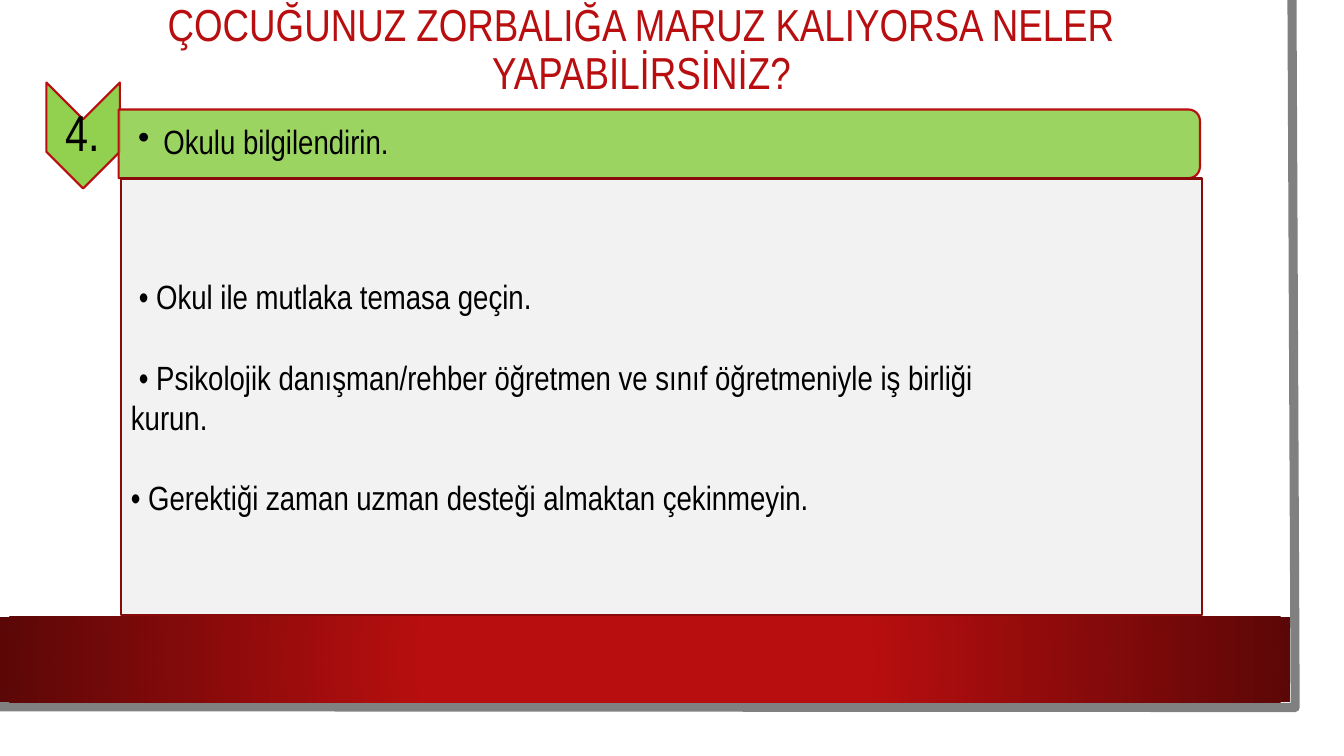
"""Builds the slide on informing the school when a child is bullied."""
from dataclasses import dataclass

from lxml import etree
from pptx import Presentation
from pptx import util as u
from pptx.dml.color import RGBColor
from pptx.enum import shapes, text
from pptx.oxml import ns

HEADING = "ÇOCUĞUNUZ ZORBALIĞA MARUZ KALIYORSA NELER YAPABİLİRSİNİZ?"
STEP = "4."
ADVICE = "Okulu bilgilendirin."
# (text, first-line indent in cm, gap before in points)
DETAILS = [
    ("• Okul ile mutlaka temasa geçin.", 0.2, 0),
    ("• Psikolojik danışman/rehber öğretmen ve sınıf öğretmeniyle iş birliği", 0.2, 28.7),
    ("kurun.", 0, 0),
    ("• Gerektiği zaman uzman desteği almaktan çekinmeyin.", 0, 28.7),
]
BOXES = {
    "paper": (0, 0, 33.27, 18.47),
    "band": (0, 15.54, 32.51, 2.16),
    "heading": (1.73, 0.53, 28.88, 1.52),
    "chevron": (1.17, 2.08, 1.85, 2.67),
    "step": (1.17, 3.02, 1.85, 0.79),
    "bar": (2.99, 2.76, 27.25, 1.73),
    "advice": (3, 2.84, 27.18, 1.55),
    "details": (3.05, 4.5, 27.25, 11),
}
PAPER_EDGE = [(32.56, 0), (32.64, 17.83), (0, 17.81)]


@dataclass(frozen=True)
class Theme:
    """Colours, font and type sizes."""
    font: str = "Arial Narrow"
    white: str = "FFFFFF"
    black: str = "000000"
    grey: str = "808080"
    pale: str = "F2F2F2"
    red: str = "B80E0F"
    deep_red: str = "880A0B"
    dark_red: str = "5C0707"
    green: str = "92D050"
    heading: int = 32
    step: int = 36
    body: int = 24
    outline: float = 1.5
    edge: float = 6.5


THEME = Theme()


def frame(name, turned=False):
    """Return a box in Cm, with its sides swapped for a quarter turn."""
    left, top, width, height = BOXES[name]
    if turned:
        shift = (width - height) / 2
        left, top, width, height = left + shift, top - shift, height, width
    return [u.Cm(length) for length in (left, top, width, height)]


def add_box(slide, name, kind, fill, line=None, turned=False):
    """Add a preset shape with flat fill and optional outline."""
    box = slide.shapes.add_shape(kind, *frame(name, turned))
    box.shadow.inherit = False
    box.rotation = 90 if turned else 0
    box.fill.solid()
    box.fill.fore_color.rgb = RGBColor.from_string(fill)
    if line:
        box.line.color.rgb = RGBColor.from_string(line)
        box.line.width = u.Pt(THEME.outline)
    else:
        box.line.fill.background()
    return box


def add_label(slide, name):
    """Add an empty text box and return its frame."""
    return slide.shapes.add_textbox(*frame(name)).text_frame


def style(holder, size, color=THEME.black, align=text.PP_ALIGN.LEFT, spacing=0.9):
    """Format every paragraph of a text frame."""
    holder.word_wrap = True
    holder.auto_size = text.MSO_AUTO_SIZE.NONE
    holder.vertical_anchor = text.MSO_ANCHOR.MIDDLE
    for paragraph in holder.paragraphs:
        paragraph.alignment = align
        paragraph.line_spacing = spacing
        for run in paragraph.runs:
            run.font.name = THEME.font
            run.font.size = u.Pt(size)
            run.font.color.rgb = RGBColor.from_string(color)


def set_insets(holder, left, other):
    """Set the left inset and the three others, in cm."""
    holder.margin_left = u.Cm(left)
    holder.margin_top = holder.margin_right = holder.margin_bottom = u.Cm(other)


def glow(box):
    """Give a shape the red gradient that darkens from its centre."""
    solid = box.fill._xPr.find(ns.qn("a:solidFill"))
    gradient = etree.fromstring(
        f'<a:gradFill {ns.nsdecls("a")} rotWithShape="1"><a:gsLst>'
        f'<a:gs pos="34000"><a:srgbClr val="{THEME.red}"/></a:gs>'
        f'<a:gs pos="100000"><a:srgbClr val="{THEME.dark_red}"/></a:gs></a:gsLst>'
        '<a:path path="circle"><a:fillToRect l="50000" t="50000" r="50000" b="50000"/>'
        '</a:path></a:gradFill>')
    solid.getparent().replace(solid, gradient)


def draw_backdrop(slide):
    """Draw the paper, its grey edge and the red band."""
    preset = shapes.MSO_SHAPE.RECTANGLE
    add_box(slide, "paper", preset, THEME.white)
    start, *rest = [(u.Cm(x), u.Cm(y)) for x, y in PAPER_EDGE]
    outline = slide.shapes.build_freeform(*start)
    outline.add_line_segments(rest, close=False)
    edge = outline.convert_to_shape()
    edge.shadow.inherit = False
    edge.fill.background()
    edge.line.color.rgb = RGBColor.from_string(THEME.grey)
    edge.line.width = u.Pt(THEME.edge)
    glow(add_box(slide, "band", preset, THEME.red))


def write_heading(slide):
    """Place the title in front of the backdrop."""
    heading = slide.shapes.title
    slide.shapes._spTree.append(heading._element)
    heading.left, heading.top, heading.width, heading.height = frame("heading")
    heading.text_frame.text = HEADING
    style(heading.text_frame, THEME.heading, THEME.red, text.PP_ALIGN.CENTER)


def draw_step(slide):
    """Draw the numbered chevron and the green bar with its advice."""
    preset = shapes.MSO_SHAPE
    add_box(slide, "chevron", preset.CHEVRON, THEME.green, THEME.red, turned=True)
    step = add_label(slide, "step")
    step.text = STEP
    set_insets(step, 0.08, 0.08)
    style(step, THEME.step, align=text.PP_ALIGN.CENTER)

    bar = add_box(slide, "bar", preset.ROUND_2_SAME_RECTANGLE, THEME.green,
                  THEME.red, turned=True)
    tint = bar.fill._xPr.find(ns.qn("a:solidFill"))[0]
    etree.SubElement(tint, ns.qn("a:alpha"), val="90000")

    advice = add_label(slide, "advice")
    advice.text = ADVICE
    set_insets(advice, 0.48, 0.05)
    layout = advice.paragraphs[0]._p.get_or_add_pPr()
    layout.set("marL", str(u.Cm(0.64)))
    layout.set("indent", str(u.Cm(-0.64)))
    etree.SubElement(layout, ns.qn("a:buChar"), char="•")
    style(advice, THEME.body)


def draw_details(slide):
    """Draw the grey panel with its lines of advice."""
    panel = add_box(slide, "details", shapes.MSO_SHAPE.RECTANGLE, THEME.pale,
                    THEME.deep_red)
    details = panel.text_frame
    details.text = "\n".join(line for line, _, _ in DETAILS)
    style(details, THEME.body, spacing=1.0)
    for paragraph, (_, indent, gap) in zip(details.paragraphs, DETAILS):
        paragraph._p.get_or_add_pPr().set("indent", str(u.Cm(indent)))
        if gap:
            paragraph.space_before = u.Pt(gap)


def main():
    """Build and save the presentation."""
    deck = Presentation()
    deck.slide_width, deck.slide_height = u.Cm(33.87), u.Cm(19.05)
    slide = deck.slides.add_slide(deck.slide_layouts[5])
    draw_backdrop(slide)
    write_heading(slide)
    draw_step(slide)
    draw_details(slide)
    deck.save("out.pptx")


if __name__ == "__main__":
    main()
